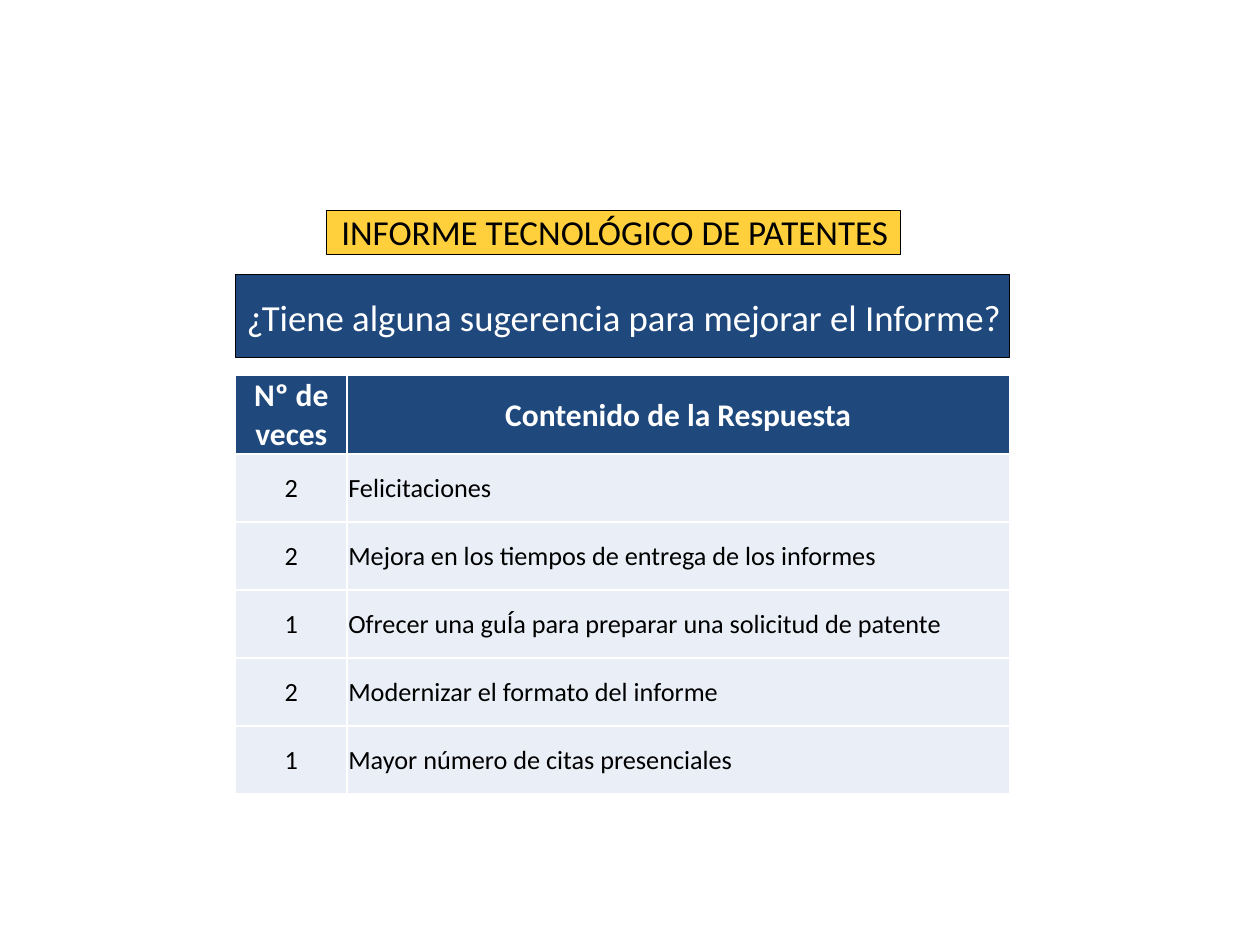
"""Build the slide of suggestions for improving the patent technology report."""
from dataclasses import dataclass

from lxml import etree
from pptx import Presentation
from pptx.dml.color import RGBColor
from pptx.enum.shapes import MSO_SHAPE
from pptx.enum.text import MSO_ANCHOR, PP_ALIGN
from pptx.oxml.ns import qn
from pptx.slide import Slide
from pptx.table import _Cell
from pptx.text.text import _Paragraph
from pptx.util import Pt

RECTANGLE = MSO_SHAPE.RECTANGLE
MIDDLE = MSO_ANCHOR.MIDDLE
CENTER, LEFT = PP_ALIGN.CENTER, PP_ALIGN.LEFT

BLACK = RGBColor(0x00, 0x00, 0x00)
WHITE = RGBColor(0xFF, 0xFF, 0xFF)
YELLOW = RGBColor(0xFF, 0xD0, 0x3B)
NAVY = RGBColor(0x1F, 0x49, 0x7D)
PALE_BLUE = RGBColor(0xEA, 0xEF, 0xF7)

FONT = "Calibri"
CONTENT_LEFT = 134.6
COLUMN_WIDTHS = (63.8, 378.5)
CONTENT_WIDTH = sum(COLUMN_WIDTHS)
TABLE_TOP = 214.7
HEADER_HEIGHT = 44.2
ROW_HEIGHT = 38.9
CELL_MARGIN = 0.7
BORDER_WIDTH = 1


@dataclass(frozen=True)
class TextStyle:
    """Look of the text in a banner or a table cell."""

    size: float
    color: RGBColor
    bold: bool = False


@dataclass(frozen=True)
class Banner:
    """A filled, outlined rectangle holding one line of text."""

    text: str
    left: float
    top: float
    width: float
    height: float
    fill: RGBColor
    style: TextStyle
    line_spacing: float = 1.0


@dataclass(frozen=True)
class Answer:
    """One kind of answer and how often it was given."""

    count: int
    content: str


BANNERS = (
    Banner("INFORME TECNOLÓGICO DE PATENTES", 186.5, 120.2, 328.3, 25.4,
           YELLOW, TextStyle(20, BLACK), 0.9),
    Banner("¿Tiene alguna sugerencia para mejorar el Informe?", CONTENT_LEFT, 156.8,
           CONTENT_WIDTH, 47.3, NAVY, TextStyle(21, WHITE)),
)
HEADERS = ("Nº de veces", "Contenido de la Respuesta")
ANSWERS = (
    Answer(2, "Felicitaciones"),
    Answer(2, "Mejora en los tiempos de entrega de los informes"),
    Answer(1, "Ofrecer una guÍa para preparar una solicitud de patente"),
    Answer(2, "Modernizar el formato del informe"),
    Answer(1, "Mayor número de citas presenciales"),
)
HEADER_STYLE = TextStyle(18, WHITE, True)
BODY_STYLE = TextStyle(15, BLACK)


def write_text(paragraph: _Paragraph, text: str, style: TextStyle, alignment: PP_ALIGN) -> None:
    """Put styled text in a paragraph."""
    paragraph.text = text
    paragraph.alignment = alignment
    paragraph.font.name = FONT
    paragraph.font.size = Pt(style.size)
    paragraph.font.bold = style.bold
    paragraph.font.color.rgb = style.color


def add_banner(slide: Slide, banner: Banner) -> None:
    """Draw one banner."""
    shape = slide.shapes.add_shape(
        RECTANGLE, Pt(banner.left), Pt(banner.top), Pt(banner.width), Pt(banner.height))
    shape.shadow.inherit = False
    shape.fill.solid()
    shape.fill.fore_color.rgb = banner.fill
    shape.line.color.rgb = BLACK
    shape.line.width = Pt(0.75)
    frame = shape.text_frame
    frame.word_wrap = True
    frame.vertical_anchor = MIDDLE
    frame.margin_left = frame.margin_top = Pt(1.5)
    frame.margin_right = frame.margin_bottom = Pt(0)
    paragraph = frame.paragraphs[0]
    write_text(paragraph, banner.text, banner.style, CENTER)
    paragraph.line_spacing = banner.line_spacing


def add_borders(cell: _Cell) -> None:
    """Give a cell white borders on all four sides."""
    properties = cell._tc.get_or_add_tcPr()
    for position, side in enumerate(("lnL", "lnR", "lnT", "lnB")):
        line = etree.Element(qn(f"a:{side}"), w=str(Pt(BORDER_WIDTH)))
        fill = etree.SubElement(line, qn("a:solidFill"))
        etree.SubElement(fill, qn("a:srgbClr"), val=str(WHITE))
        properties.insert(position, line)


def fill_cell(cell: _Cell, text: str, style: TextStyle, fill: RGBColor,
              alignment: PP_ALIGN) -> None:
    """Set the text, fill, margins and borders of a cell."""
    cell.fill.solid()
    cell.fill.fore_color.rgb = fill
    cell.vertical_anchor = MIDDLE
    cell.margin_left = cell.margin_right = cell.margin_top = Pt(CELL_MARGIN)
    cell.margin_bottom = Pt(0)
    write_text(cell.text_frame.paragraphs[0], text, style, alignment)
    add_borders(cell)


def add_answer_table(slide: Slide) -> None:
    """Draw the table of answers."""
    heights = [HEADER_HEIGHT] + [ROW_HEIGHT] * len(ANSWERS)
    table = slide.shapes.add_table(
        len(heights), len(COLUMN_WIDTHS), Pt(CONTENT_LEFT), Pt(TABLE_TOP),
        Pt(CONTENT_WIDTH), Pt(sum(heights))).table
    for column, width in zip(table.columns, COLUMN_WIDTHS):
        column.width = Pt(width)
    for row, height in zip(table.rows, heights):
        row.height = Pt(height)
    for index, header in enumerate(HEADERS):
        fill_cell(table.cell(0, index), header, HEADER_STYLE, NAVY, CENTER)
    for index, answer in enumerate(ANSWERS, start=1):
        fill_cell(table.cell(index, 0), str(answer.count), BODY_STYLE, PALE_BLUE, CENTER)
        fill_cell(table.cell(index, 1), answer.content, BODY_STYLE, PALE_BLUE, LEFT)


def main() -> None:
    """Build and save the presentation."""
    presentation = Presentation()
    presentation.slide_width = Pt(720)
    presentation.slide_height = Pt(540)
    slide = presentation.slides.add_slide(presentation.slide_layouts[6])
    for banner in BANNERS:
        add_banner(slide, banner)
    add_answer_table(slide)
    presentation.save("out.pptx")


if __name__ == "__main__":
    main()
